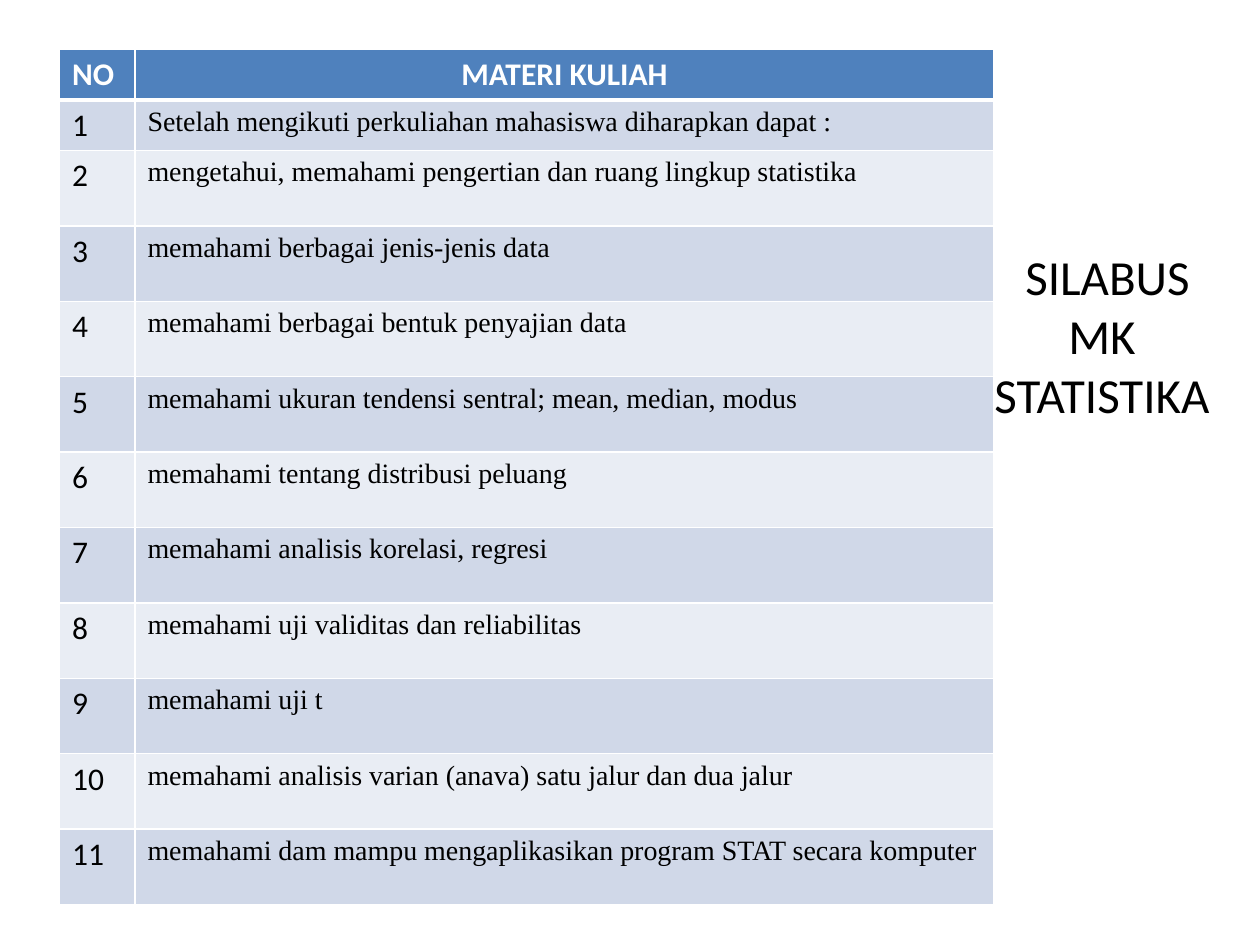
from dataclasses import dataclass
from typing import Any

from lxml.etree import SubElement
from pptx import Presentation
from pptx.dml.color import RGBColor
from pptx.enum.text import MSO_ANCHOR, PP_ALIGN
from pptx.oxml.ns import qn
from pptx.util import Cm, Pt

BLACK = RGBColor(0x00, 0x00, 0x00)
WHITE = RGBColor(0xFF, 0xFF, 0xFF)
HEADER_BLUE = RGBColor(0x4F, 0x81, 0xBD)
BAND_DARK = RGBColor(0xD0, 0xD8, 0xE8)
BAND_LIGHT = RGBColor(0xE9, 0xED, 0xF4)

TITLE = {"name": "Calibri", "size": Pt(28)}
HEADER = {"name": "Calibri", "size": Pt(18), "bold": True}
NUMBER = {"name": "Calibri", "size": Pt(18), "bold": False}
TOPIC = {"name": "Times New Roman", "size": Pt(16), "bold": False}

COL_WIDTHS = (1.52, 17.32)
SHORT_ROW, TALL_ROW = 0.97, 1.52
TOPICS = (
    "Setelah mengikuti perkuliahan mahasiswa diharapkan dapat :",
    "mengetahui, memahami pengertian dan ruang lingkup statistika",
    "memahami berbagai jenis-jenis data",
    "memahami berbagai bentuk penyajian data",
    "memahami ukuran tendensi sentral; mean, median, modus",
    "memahami tentang distribusi peluang",
    "memahami analisis korelasi, regresi",
    "memahami uji validitas dan reliabilitas",
    "memahami uji t",
    "memahami analisis varian (anava) satu jalur dan dua jalur",
    "memahami dam mampu mengaplikasikan program STAT secara komputer",
)


@dataclass
class CellText:
    text: str
    font: dict[str, Any]
    color: RGBColor = BLACK
    align: PP_ALIGN = PP_ALIGN.LEFT


@dataclass
class Row:
    cells: tuple[CellText, CellText]
    fill: RGBColor
    height: float
    bottom: float = 1


def write(tf, item: CellText) -> None:
    """Put formatted text in the first paragraph of a frame."""
    p = tf.paragraphs[0]
    p.text = item.text
    p.alignment = item.align
    for r in p.runs:
        for key, value in item.font.items():
            setattr(r.font, key, value)
        r.font.color.rgb = item.color


def add_borders(cell, widths: dict[str, float]) -> None:
    """Draw white borders ahead of the fill of a cell."""
    tc_pr = cell._tc.get_or_add_tcPr()
    for i, (side, width) in enumerate(widths.items()):
        ln = SubElement(tc_pr, qn(f"a:{side}"), w=str(Pt(width)))
        SubElement(SubElement(ln, qn("a:solidFill")), qn("a:srgbClr"), val=str(WHITE))
        tc_pr.insert(i, ln)


def build_rows() -> list[Row]:
    """Return the header row and the numbered, banded topic rows."""
    header = (CellText("NO", HEADER, WHITE),
              CellText("MATERI KULIAH", HEADER, WHITE, PP_ALIGN.CENTER))
    rows = [Row(header, HEADER_BLUE, SHORT_ROW, bottom=3)]
    for n, topic in enumerate(TOPICS, 1):
        cells = (CellText(str(n), NUMBER), CellText(topic, TOPIC))
        fill = BAND_DARK if n % 2 else BAND_LIGHT
        rows.append(Row(cells, fill, SHORT_ROW if n == 1 else TALL_ROW))
    return rows


def add_syllabus(s, rows: list[Row]) -> None:
    """Add the syllabus table."""
    height = sum(row.height for row in rows)
    table = s.shapes.add_table(len(rows), len(COL_WIDTHS), Cm(1.2), Cm(1),
                               Cm(sum(COL_WIDTHS)), Cm(height)).table
    for column, width in zip(table.columns, COL_WIDTHS):
        column.width = Cm(width)
    top = 1
    for i, row in enumerate(rows):
        table.rows[i].height = Cm(row.height)
        for j, item in enumerate(row.cells):
            cell = table.cell(i, j)
            cell.fill.solid()
            cell.fill.fore_color.rgb = row.fill
            add_borders(cell, {"lnL": 1, "lnR": 1, "lnT": top, "lnB": row.bottom})
            write(cell.text_frame, item)
        top = row.bottom


def add_title(s) -> None:
    """Add the title beside the table."""
    sp = s.shapes.add_textbox(Cm(19.25), Cm(4.57), Cm(6.15), Cm(4.37))
    tf = sp.text_frame
    tf.word_wrap = True
    tf.vertical_anchor = MSO_ANCHOR.MIDDLE
    write(tf, CellText("SILABUS\vMK \vSTATISTIKA ", TITLE, align=PP_ALIGN.CENTER))


def main() -> None:
    """Build and save the slide."""
    prs = Presentation()
    prs.slide_width, prs.slide_height = Cm(25.4), Cm(19.05)
    s = prs.slides.add_slide(prs.slide_layouts[6])
    add_title(s)
    add_syllabus(s, build_rows())
    prs.save("out.pptx")


if __name__ == "__main__":
    main()
